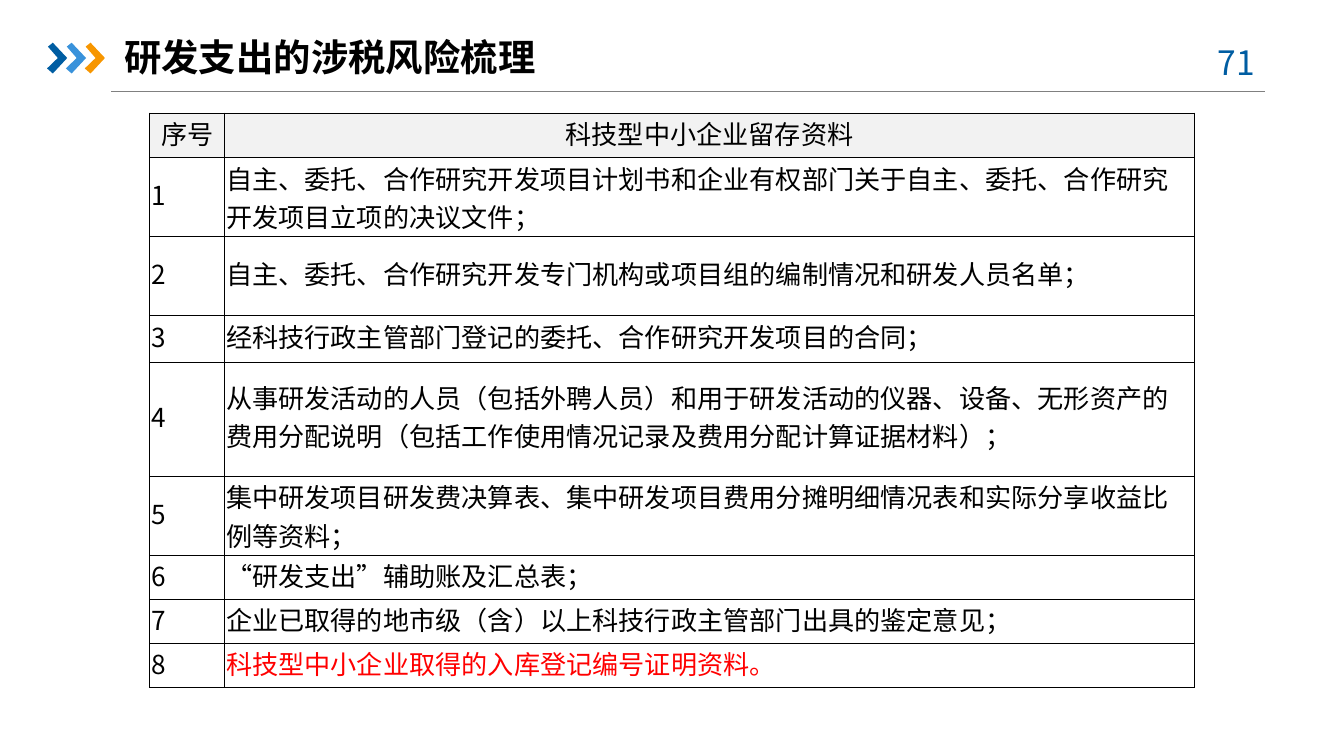
from lxml.etree import SubElement as Sub
from pptx import Presentation as Deck
from pptx.dml.color import RGBColor as RGB
from pptx.enum.shapes import MSO_CONNECTOR as Link
from pptx.enum.text import MSO_ANCHOR as Anchor, MSO_AUTO_SIZE as Auto, PP_ALIGN as Align
from pptx.oxml.ns import qn
from pptx.util import Pt

NOTO = "Noto Sans CJK SC"
HEAD = ("序号", "科技型中小企业留存资料")
ITEMS = (
    "自主、委托、合作研究开发项目计划书和企业有权部门关于自主、委托、合作研究开发项目立项的决议文件；",
    "自主、委托、合作研究开发专门机构或项目组的编制情况和研发人员名单；",
    "经科技行政主管部门登记的委托、合作研究开发项目的合同；",
    "从事研发活动的人员（包括外聘人员）和用于研发活动的仪器、设备、无形资产的费用分配说明（包括工作使用情况记录及费用分配计算证据材料）；",
    "集中研发项目研发费决算表、集中研发项目费用分摊明细情况表和实际分享收益比例等资料；",
    "“研发支出”辅助账及汇总表；",
    "企业已取得的地市级（含）以上科技行政主管部门出具的鉴定意见；",
    "科技型中小企业取得的入库登记编号证明资料。",
)
COLS = (40.2, 519.6)
ROWS = (23.6, 42.3, 42.3, 25.2, 61.1, 42.3, 23.6, 23.6, 23.6)
ARROW = ((25.7, 25), (28.3, 22.9), (36, 31.1), (28.3, 39.4), (25.2, 36.7), (31, 31.1))
CELL = {
    "margin_left": Pt(0.75),
    "margin_right": Pt(0.75),
    "margin_top": Pt(0.75),
    "margin_bottom": Pt(3.6),
    "vertical_anchor": Anchor.MIDDLE,
}


def tint(code):
    """Turn a hex string into a colour."""
    return RGB.from_string(code)


def apply(obj, vals):
    """Set each named value on an object."""
    for name, val in vals.items():
        setattr(obj, name, val)


def write(frame, text, size, font=NOTO, color="000000", bold=False, align=Align.LEFT):
    """Put one styled run in a text frame."""
    para = frame.paragraphs[0]
    para.alignment = align
    run = para.add_run()
    run.text = text
    apply(run.font, {"size": Pt(size), "name": font, "bold": bold})
    run.font.color.rgb = tint(color)
    Sub(run.font._element, qn("a:ea"), typeface=NOTO)


def label(slide, box, text, **style):
    """Add a text box that wraps."""
    frame = slide.shapes.add_textbox(*map(Pt, box)).text_frame
    apply(frame, {"word_wrap": True, "auto_size": Auto.SHAPE_TO_FIT_TEXT})
    write(frame, text, **style)


def rule(slide, left, right, y):
    """Draw the thin line below the title."""
    line = slide.shapes.add_connector(Link.STRAIGHT, Pt(left), Pt(y), Pt(right), Pt(y))
    line.line.width = Pt(0.75)
    line.line.color.rgb = tint("808080")
    Sub(line._element.spPr, qn("a:effectLst"))


def arrow(slide, shift, color):
    """Draw one chevron, moved right by shift."""
    dots = [(Pt(x + shift), Pt(y)) for x, y in ARROW]
    path = slide.shapes.build_freeform(*dots[0])
    path.add_line_segments(dots[1:], close=True)
    shape = path.convert_to_shape()
    shape.shadow.inherit = False
    shape.fill.solid()
    shape.fill.fore_color.rgb = tint(color)
    shape.line.fill.background()


def edge(cell):
    """Give a cell thin black borders."""
    props = cell._tc.get_or_add_tcPr()
    for side in ("lnL", "lnR", "lnT", "lnB"):
        line = Sub(props, qn("a:" + side), w=str(Pt(0.5)))
        Sub(Sub(line, qn("a:solidFill")), qn("a:srgbClr"), val="000000")


def fill(cell, text, shade=None, **style):
    """Format one cell and write its text."""
    apply(cell, CELL)
    edge(cell)
    if shade:
        cell.fill.solid()
        cell.fill.fore_color.rgb = tint(shade)
    else:
        cell.fill.background()
    write(cell.text_frame, text, 14, **style)


def grid(slide, left, top):
    """Build the numbered table of records."""
    size = map(Pt, (left, top, sum(COLS), sum(ROWS)))
    table = slide.shapes.add_table(len(ROWS), len(COLS), *size).table
    apply(table, {"first_row": False, "horz_banding": False})
    for col, width in zip(table.columns, COLS):
        col.width = Pt(width)
    for row, height in zip(table.rows, ROWS):
        row.height = Pt(height)
    for col, text in enumerate(HEAD):
        fill(table.cell(0, col), text, "F2F2F2", font="Arial", align=Align.CENTER)
    for num, text in enumerate(ITEMS, 1):
        color = "FF0000" if num == len(ITEMS) else "000000"
        fill(table.cell(num, 0), str(num))
        fill(table.cell(num, 1), text, font="Arial", color=color)


def main():
    """Build and save the slide."""
    deck = Deck()
    apply(deck, {"slide_width": Pt(720), "slide_height": Pt(405)})
    slide = deck.slides.add_slide(deck.slide_layouts[6])
    rule(slide, 59.5, 677.5, 49.2)
    for step, color in enumerate(("005DA2", "3992DB", "F79600")):
        arrow(slide, step * 10.1, color)
    label(slide, (638, 18.7, 52.5, 29), "71 ", size=18, color="005DA2", align=Align.CENTER)
    label(slide, (59.5, 15, 427, 31.5), "研发支出的涉税风险梳理", size=20, bold=True)
    grid(slide, 80.2, 60.6)
    deck.save("out.pptx")


if __name__ == "__main__":
    main()
